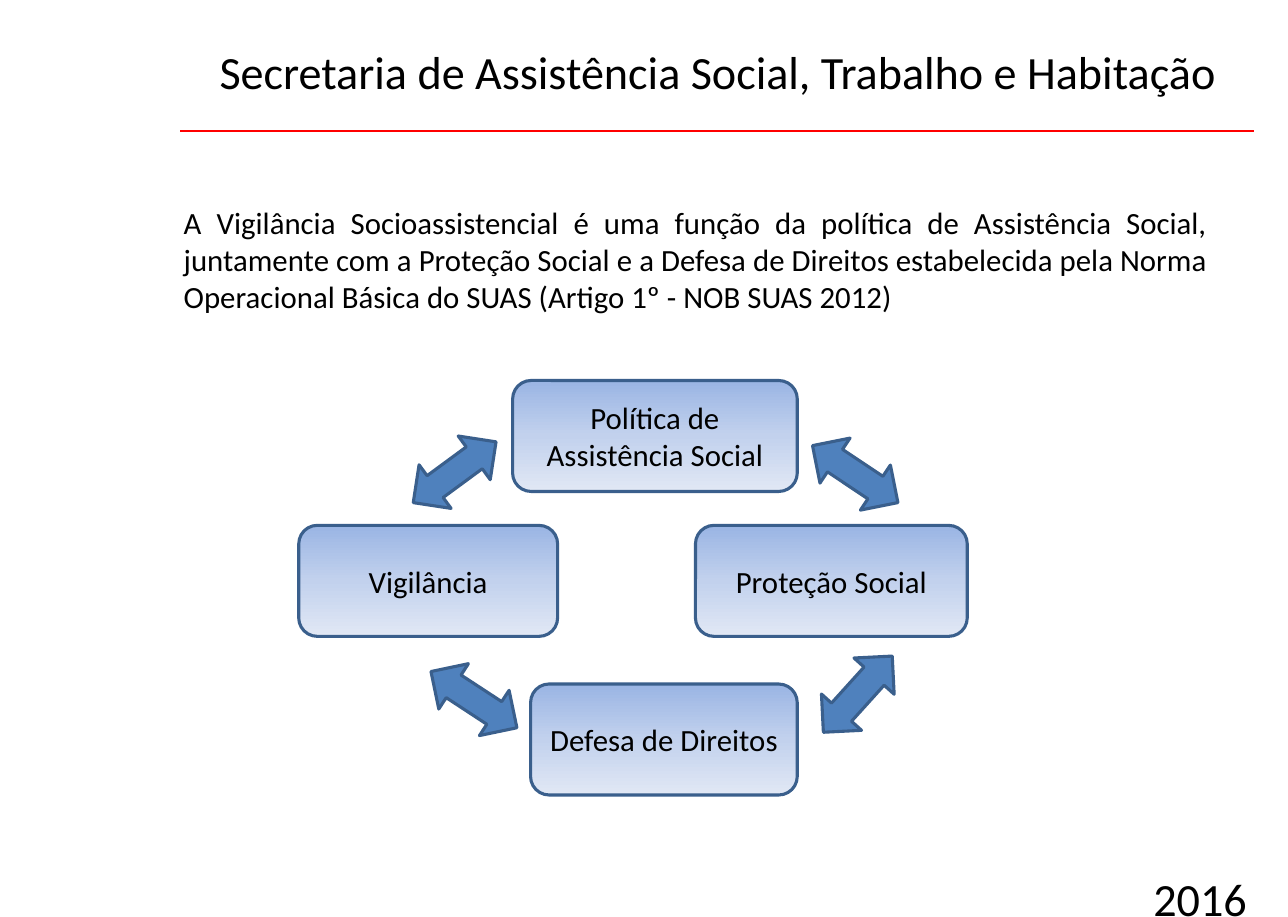
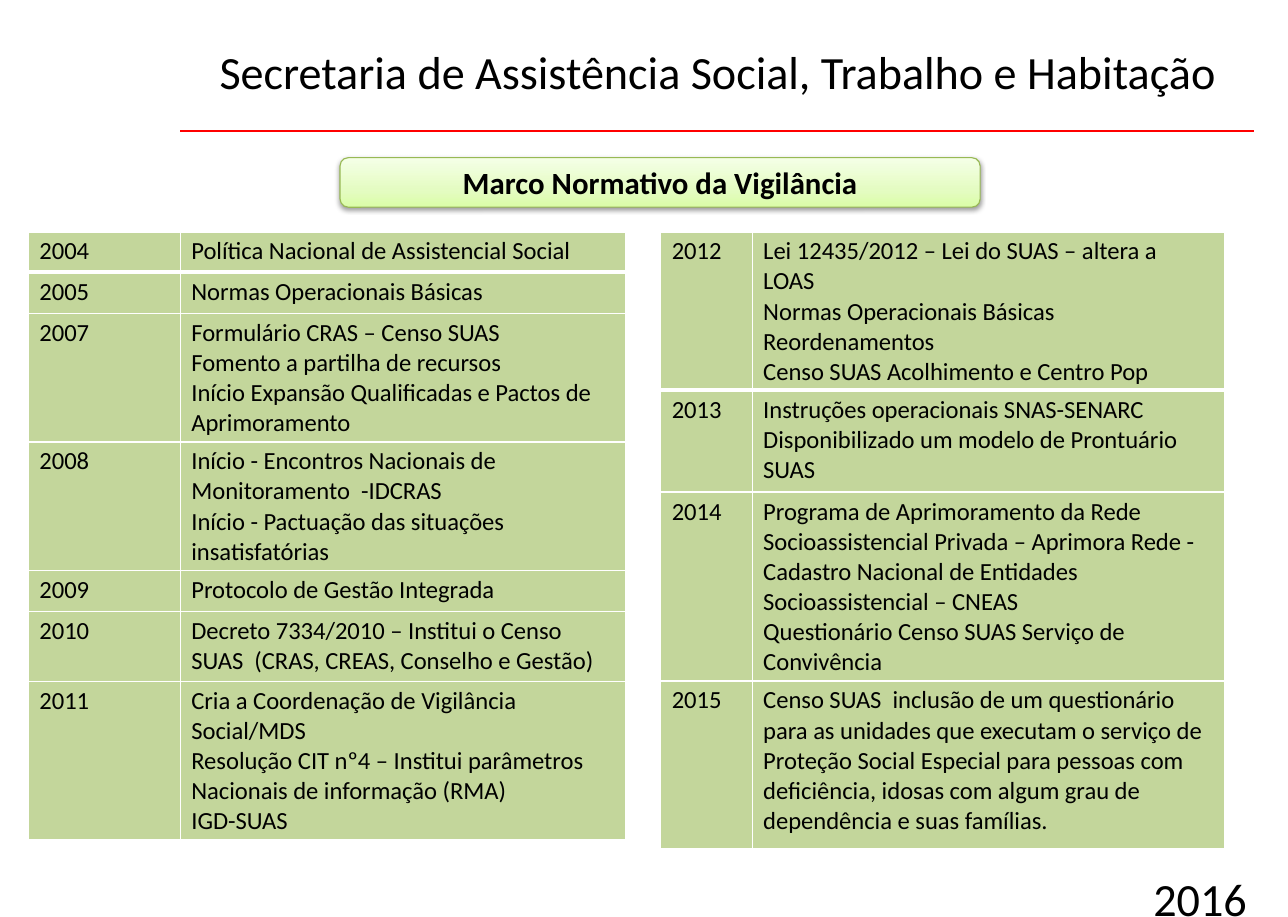
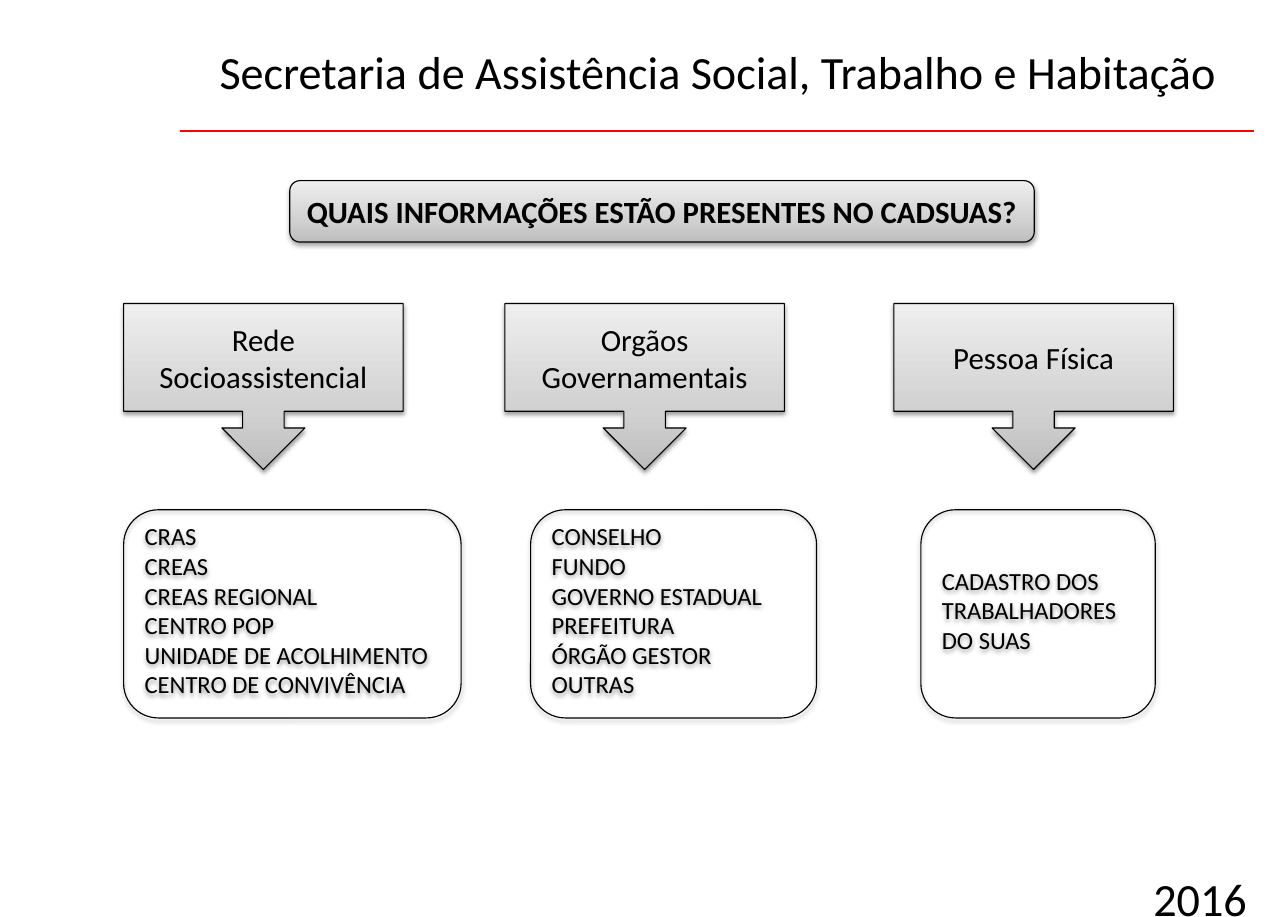
"""Builds three slides on social assistance monitoring, placed in percent of the slide."""
from pptx import Presentation
from pptx.dml.color import RGBColor
from pptx.enum.shapes import MSO_CONNECTOR, MSO_SHAPE
from pptx.enum.text import MSO_ANCHOR, MSO_AUTO_SIZE, PP_ALIGN
from pptx.oxml import parse_xml
from pptx.oxml.ns import nsdecls, qn
from pptx.util import Inches, Pt

ROUND = MSO_SHAPE.ROUNDED_RECTANGLE
CALL = MSO_SHAPE.DOWN_ARROW_CALLOUT
ARROW = MSO_SHAPE.UP_DOWN_ARROW
LINE = MSO_CONNECTOR.STRAIGHT
LEFT, MID, FULL = PP_ALIGN.LEFT, PP_ALIGN.CENTER, PP_ALIGN.JUSTIFY
TOP, CORE = MSO_ANCHOR.TOP, MSO_ANCHOR.MIDDLE
FIXED = MSO_AUTO_SIZE.NONE

HUES = {"ink": "000000", "rule": "FF0000", "edge": "3A5F8C", "arrow": "4F81BD",
        "leaf": "98B955", "cell": "C3D69B", "grid": "FFFFFF"}
FADES = {
    "blue": (90, [(0, "9AB5E4"), (50, "C2D1ED"), (100, "E1E8F5")]),
    "green": (270, [(0, "DAFDA7"), (35, "E4FCC2"), (100, "F5FFE7")]),
    "gray": (270, [(0, "BDBDBD"), (35, "D1D1D1"), (100, "EEEEEE")]),
}
HEAD = "Secretaria de Assistência Social, Trabalho e Habitação"
YEAR = "2016"
FONT = "Calibri"


def tint(name):
    return RGBColor.from_string(HUES[name])


class Deck:
    """Holds the style and the current slide."""

    def __init__(self, wide, high):
        self.show = Presentation()
        self.show.slide_width = Inches(wide)
        self.show.slide_height = Inches(high)
        self.page = None

    def x(self, part):
        return round(self.show.slide_width * part / 100)

    def y(self, part):
        return round(self.show.slide_height * part / 100)

    def box(self, left, top, wide, high):
        return self.x(left), self.y(top), self.x(wide), self.y(high)

    def move(self, item, box):
        item.left, item.top, item.width, item.height = self.box(*box)

    def text(self, frame, lines, size, align=LEFT, bold=False, plain=False):
        frame.word_wrap = True
        for num, line in enumerate(lines):
            para = frame.paragraphs[0] if num == 0 else frame.add_paragraph()
            if plain:
                props = para._p.get_or_add_pPr()
                props.set("marL", "0")
                props.set("indent", "0")
                props.append(parse_xml(f"<a:buNone {nsdecls('a')}/>"))
                para.space_before = Pt(0)
            para.alignment = align
            run = para.add_run()
            run.text = line
            run.font.name, run.font.size, run.font.bold = FONT, Pt(size), bold
            run.font.color.rgb = tint("ink")

    def label(self, item, box, text):
        self.move(item, box)
        frame = item.text_frame
        frame.auto_size = FIXED
        frame.vertical_anchor = TOP
        frame.margin_left = frame.margin_right = Inches(0.11)
        frame.margin_top = frame.margin_bottom = Inches(0.06)
        self.text(frame, [text], 30)

    def start(self, kind):
        self.page = self.show.slides.add_slide(self.show.slide_layouts[kind])
        self.label(self.page.shapes.title, (16.1, 4, 81.1, 7.5), HEAD)
        spot = (88.6, 94.2, 11.4, 5.8)
        self.label(self.page.shapes.add_textbox(*self.box(*spot)), spot, YEAR)
        rule = self.page.shapes.add_connector(
            LINE, self.x(14), self.y(14.3), self.x(97.4), self.y(14.3))
        rule.line.color.rgb, rule.line.width = tint("rule"), Pt(1.5)
        rule._element.spPr.append(parse_xml(f"<a:effectLst {nsdecls('a')}/>"))

    def body(self, box, text):
        item = self.page.placeholders[1]
        self.move(item, box)
        item.text_frame.auto_size = FIXED
        item.text_frame.vertical_anchor = CORE
        self.text(item.text_frame, [text], 20, FULL, plain=True)

    def fade(self, item, name):
        turn, stops = FADES[name]
        marks = "".join(f'<a:gs pos="{pos * 1000}"><a:srgbClr val="{hue}"/></a:gs>'
                        for pos, hue in stops)
        item._element.spPr.insert(2, parse_xml(
            f'<a:gradFill {nsdecls("a")} rotWithShape="1"><a:gsLst>{marks}</a:gsLst>'
            f'<a:lin ang="{turn * 60000}" scaled="0"/></a:gradFill>'))

    def shade(self, item):
        item._element.spPr.find(qn("a:effectLst")).append(parse_xml(
            f'<a:outerShdw {nsdecls("a")} blurRad="{Pt(3.1)}" dist="{Pt(1.6)}" '
            'dir="5400000" rotWithShape="0"><a:srgbClr val="000000">'
            '<a:alpha val="38000"/></a:srgbClr></a:outerShdw>'))

    def shape(self, kind, box, edge="ink", width=0.75, fade=None, fill=None, shade=True):
        item = self.page.shapes.add_shape(kind, *self.box(*box))
        if fade:
            self.fade(item, fade)
        elif fill:
            item.fill.solid()
            item.fill.fore_color.rgb = tint(fill)
        else:
            item.fill.background()
        item.line.color.rgb, item.line.width = tint(edge), Pt(width)
        item.shadow.inherit = False
        if shade:
            self.shade(item)
        item.text_frame.vertical_anchor = CORE
        return item

    def node(self, box, text):
        item = self.shape(ROUND, box, "edge", 2, "blue", shade=False)
        self.text(item.text_frame, [text], 20, MID)

    def arrow(self, left, top, turn):
        item = self.shape(ARROW, (left, top, 4.2, 11.2), "edge", 2, fill="arrow", shade=False)
        item.rotation = turn

    def card(self, kind, box, text, fade="gray", edge="ink", bold=False):
        item = self.shape(kind, box, edge, fade=fade)
        self.text(item.text_frame, [text], 20, MID, bold)

    def roll(self, box, lines):
        item = self.shape(ROUND, box)
        item.text_frame.margin_bottom = Inches(0.12)
        self.text(item.text_frame, lines, 16)

    def edges(self, cell, row):
        props = cell._tc.get_or_add_tcPr()
        thick = {"T": 3 if row == 1 else 1, "B": 3 if row == 0 else 1}
        for side in "LRTB":
            props.append(parse_xml(
                f'<a:ln{side} {nsdecls("a")} w="{Pt(thick.get(side, 1))}"><a:solidFill>'
                f'<a:srgbClr val="{HUES["grid"]}"/></a:solidFill></a:ln{side}>'))

    def table(self, left, top, cols, rows):
        high = sum(row[0] for row in rows)
        grid = self.page.shapes.add_table(
            len(rows), len(cols), *self.box(left, top, sum(cols), high)).table
        grid.first_row = grid.horz_banding = False
        for num, wide in enumerate(cols):
            grid.columns[num].width = self.x(wide)
        for row, (tall, year, lines) in enumerate(rows):
            grid.rows[row].height = self.y(tall)
            for col, text in enumerate(([year], lines)):
                cell = grid.cell(row, col)
                cell.margin_top, cell.margin_bottom = Inches(0.04), Inches(0.03)
                self.edges(cell, row)
                cell.fill.solid()
                cell.fill.fore_color.rgb = tint("cell")
                self.text(cell.text_frame, text, 16)


def cycle(deck):
    deck.start(1)
    deck.body((13.4, 21.6, 81.2, 13.4),
              "A Vigilância Socioassistencial é uma função da política de Assistência Social, "
              "juntamente com a Proteção Social e a Defesa de Direitos estabelecida pela Norma "
              "Operacional Básica do SUAS (Artigo 1º - NOB SUAS 2012)")
    for left, top, wide, text in (
            (39.8, 41.5, 22.1, "Política de Assistência Social"),
            (41.2, 74.6, 20.7, "Defesa de Direitos"),
            (23.2, 57.3, 20.1, "Vigilância"),
            (54, 57.3, 21.1, "Proteção Social")):
        deck.node((left, top, wide, 12.1), text)
    for spot in ((33.2, 45.9, 53.7), (64.5, 70.1, 42.1),
                 (34.7, 70.7, 123.2), (64.3, 46.1, 303.7)):
        deck.arrow(*spot)


def norms(deck):
    deck.start(5)
    deck.card(ROUND, (26.4, 17.2, 49.7, 5.4), "Marco Normativo da Vigilância",
              "green", "leaf", True)
    deck.table(2.2, 25.3, (11.8, 34.6), [
        (4.4, "2004", ["Política Nacional de Assistencial Social"]),
        (4.5, "2005", ["Normas Operacionais Básicas"]),
        (14, "2007", ["Formulário CRAS – Censo SUAS",
                      "Fomento a partilha de recursos",
                      "Início Expansão Qualificadas e Pactos de Aprimoramento"]),
        (14, "2008", ["Início - Encontros Nacionais de Monitoramento  -IDCRAS",
                      "Início - Pactuação das situações insatisfatórias"]),
        (4.5, "2009", ["Protocolo de Gestão Integrada"]),
        (7.6, "2010", ["Decreto 7334/2010 – Institui o Censo SUAS  "
                       "(CRAS, CREAS, Conselho e Gestão)"]),
        (17.3, "2011", ["Cria a Coordenação de Vigilância Social/MDS",
                        "Resolução CIT nº4 – Institui parâmetros Nacionais de informação (RMA)",
                        "IGD-SUAS"]),
    ])
    deck.table(51.3, 25.3, (7.1, 36.7), [
        (17.2, "2012", ["Lei 12435/2012 – Lei do SUAS – altera a LOAS",
                        "Normas Operacionais Básicas",
                        "Reordenamentos",
                        "Censo SUAS Acolhimento e Centro Pop"]),
        (11.1, "2013", ["Instruções operacionais SNAS-SENARC",
                        "Disponibilizado um modelo de Prontuário SUAS"]),
        (20.6, "2014", ["Programa de Aprimoramento da Rede Socioassistencial Privada – "
                        "Aprimora Rede - Cadastro Nacional de Entidades "
                        "Socioassistencial – CNEAS",
                        "Questionário Censo SUAS Serviço de Convivência"]),
        (18.3, "2015", ["Censo SUAS  inclusão de um questionário para as unidades que "
                        "executam o serviço de Proteção Social Especial para pessoas com "
                        "deficiência, idosas com algum grau de dependência e suas famílias."]),
    ])


def data(deck):
    deck.start(5)
    deck.card(ROUND, (22.5, 19.7, 57.8, 6.7),
              "QUAIS INFORMAÇÕES ESTÃO PRESENTES NO CADSUAS?", bold=True)
    for left, text, side, wide, lines in (
            (9.6, "Rede Socioassistencial", 9.6, 26.2,
             ["CRAS", "CREAS", "CREAS REGIONAL", "CENTRO POP",
              "UNIDADE DE ACOLHIMENTO", "CENTRO DE CONVIVÊNCIA"]),
            (39.2, "Orgãos Governamentais", 41.2, 22.2,
             ["CONSELHO", "FUNDO", "GOVERNO ESTADUAL", "PREFEITURA",
              "ÓRGÃO GESTOR", "OUTRAS"]),
            (69.4, "Pessoa Física", 71.5, 18.2,
             ["CADASTRO DOS TRABALHADORES DO SUAS"])):
        deck.card(CALL, (left, 33.1, 21.7, 18.1), text)
        deck.roll((side, 55.6, wide, 22.7), lines)


def main():
    deck = Deck(11.62, 8.27)
    for build in (cycle, norms, data):
        build(deck)
    deck.show.save("out.pptx")


if __name__ == "__main__":
    main()
